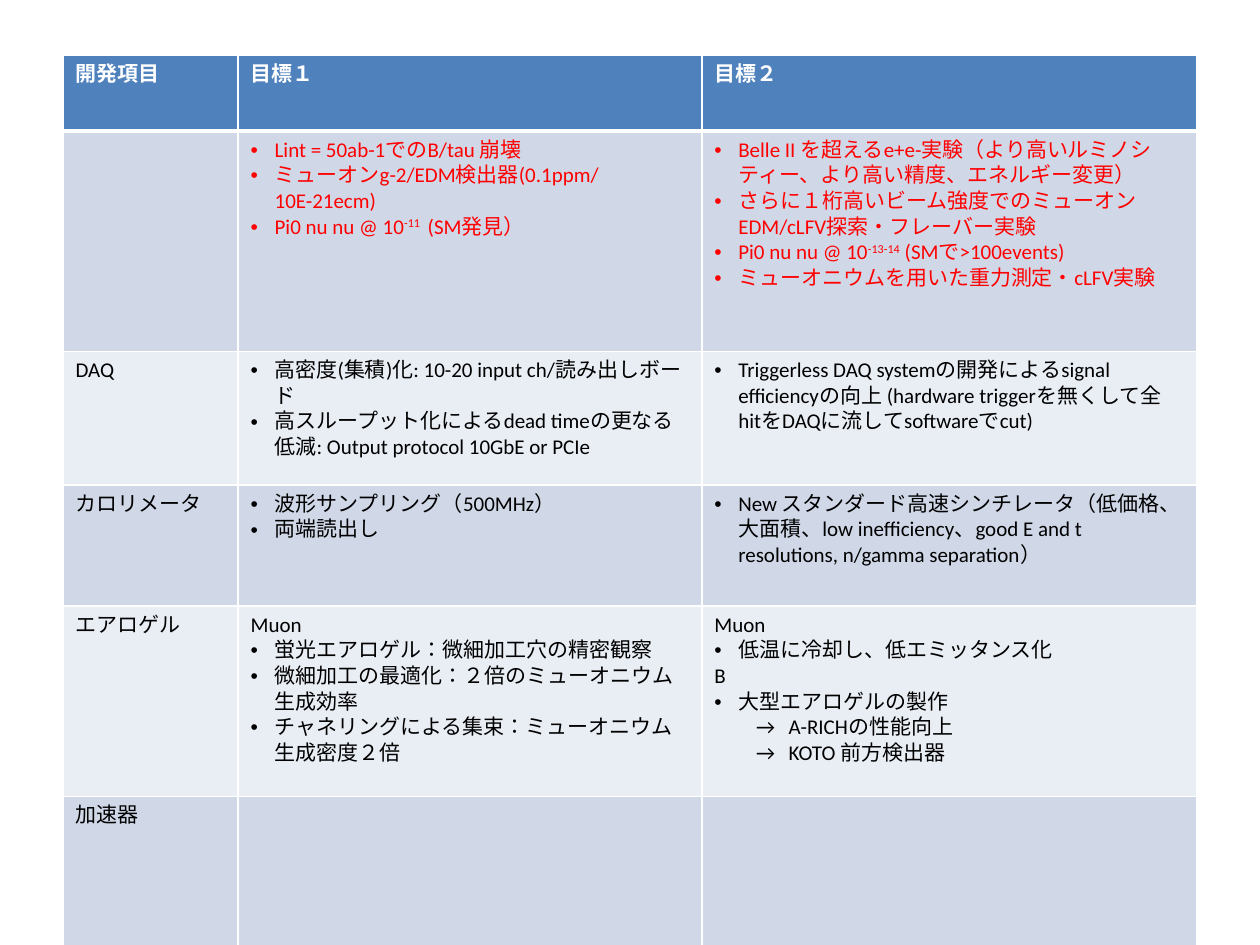
from pptx import Presentation
from pptx.dml.color import RGBColor
from pptx.oxml.ns import qn
from pptx.util import Inches, Pt
from lxml.etree import SubElement

COLORS = {
    "header": "4F81BD",
    "odd_row": "D0D8E8",
    "even_row": "E9EDF4",
    "white": "FFFFFF",
    "black": "000000",
    "red": "FF0000",
}
COLUMN_WIDTHS = [1.39, 3.68, 3.93]
ROW_HEIGHTS = [0.6, 1.75, 1.06, 0.96, 1.51, 1.35]

# Each cell is a list of lines: "• " starts a bullet, "→" is indented,
# and text between two "^" marks is superscript.
ROWS = [
    [["開発項目"], ["目標１"], ["目標２"]],
    [
        [],
        [
            "• Lint = 50ab-1でのB/tau 崩壊",
            "• ミューオンg-2/EDM検出器(0.1ppm/10E-21ecm)",
            "• Pi0 nu nu @ 10^-11 ^ (SM発見）",
        ],
        [
            "• Belle II を超えるe+e-実験（より高いルミノシティー、より高い精度、エネルギー変更）",
            "• さらに１桁高いビーム強度でのミューオンEDM/cLFV探索・フレーバー実験",
            "• Pi0 nu nu @ 10^-13-14^ (SMで>100events)",
            "• ミューオニウムを用いた重力測定・cLFV実験",
        ],
    ],
    [
        ["DAQ"],
        [
            "• 高密度(集積)化: 10-20 input ch/読み出しボード",
            "• 高スループット化によるdead timeの更なる低減: Output protocol 10GbE or PCIe",
        ],
        [
            "• Triggerless DAQ systemの開発によるsignal efficiencyの向上 "
            "(hardware triggerを無くして全hitをDAQに流してsoftwareでcut)",
        ],
    ],
    [
        ["カロリメータ"],
        ["• 波形サンプリング（500MHz）", "• 両端読出し"],
        [
            "• New スタンダード高速シンチレータ（低価格、大面積、low inefficiency、"
            "good E and t resolutions, n/gamma separation）",
        ],
    ],
    [
        ["エアロゲル"],
        [
            "Muon",
            "• 蛍光エアロゲル：微細加工穴の精密観察",
            "• 微細加工の最適化：２倍のミューオニウム生成効率",
            "• チャネリングによる集束：ミューオニウム生成密度２倍",
        ],
        [
            "Muon",
            "• 低温に冷却し、低エミッタンス化",
            "B",
            "• 大型エアロゲルの製作",
            "→\tA-RICHの性能向上",
            "→\tKOTO 前方検出器",
        ],
    ],
    [["加速器"], [], []],
]


def write_line(paragraph, text, color="black", bold=False, size=12):
    properties = paragraph._p.get_or_add_pPr()
    if text.startswith("• "):
        text = text[2:]
        properties.set("marL", str(Inches(0.19)))
        properties.set("indent", str(-Inches(0.19)))
        SubElement(properties, qn("a:buFont"), typeface="Arial")
        SubElement(properties, qn("a:buChar"), char="•")
    elif text.startswith("→"):
        properties.set("marL", str(Inches(0.59)))
        properties.set("indent", str(-Inches(0.26)))
    for position, part in enumerate(text.split("^")):
        run = paragraph.add_run()
        run.text = part
        run.font.name = "Calibri"
        run.font.size = Pt(size)
        run.font.bold = bold
        run.font.color.rgb = RGBColor.from_string(COLORS[color])
        run_properties = run._r.get_or_add_rPr()
        run_properties.set("lang", "ja-JP")
        SubElement(run_properties, qn("a:ea"), typeface="Calibri")
        if position % 2:
            run_properties.set("baseline", "30000")


def add_borders(cell, bottom=1):
    cell_properties = cell._tc.get_or_add_tcPr()
    for index, (side, width) in enumerate(
        [("L", 1), ("R", 1), ("T", 1), ("B", bottom)]
    ):
        line = SubElement(cell_properties, qn(f"a:ln{side}"), w=str(Pt(width)))
        fill = SubElement(line, qn("a:solidFill"))
        SubElement(fill, qn("a:srgbClr"), val=COLORS["white"])
        cell_properties.insert(index, line)


# Slide
presentation = Presentation()
presentation.slide_width = Inches(10)
presentation.slide_height = Inches(7.5)
slide = presentation.slides.add_slide(presentation.slide_layouts[6])

# Table grid
table = slide.shapes.add_table(
    len(ROWS), len(COLUMN_WIDTHS),
    Inches(0.5), Inches(0.44), Inches(9), Inches(sum(ROW_HEIGHTS)),
).table
for column, width in zip(table.columns, COLUMN_WIDTHS):
    column.width = Inches(width)
for row, height in zip(table.rows, ROW_HEIGHTS):
    row.height = Inches(height)

# Cell fills, borders and text
for row_index, row_lines in enumerate(ROWS):
    is_header = row_index == 0
    fill_name = "header" if is_header else "odd_row" if row_index % 2 else "even_row"
    color = {0: "white", 1: "red"}.get(row_index, "black")
    for column_index, lines in enumerate(row_lines):
        cell = table.cell(row_index, column_index)
        cell.fill.solid()
        cell.fill.fore_color.rgb = RGBColor.from_string(COLORS[fill_name])
        add_borders(cell, bottom=3 if is_header else 1)
        frame = cell.text_frame
        for line_index, line in enumerate(lines):
            paragraph = frame.add_paragraph() if line_index else frame.paragraphs[0]
            write_line(paragraph, line, color=color, bold=is_header)

presentation.save("out.pptx")
